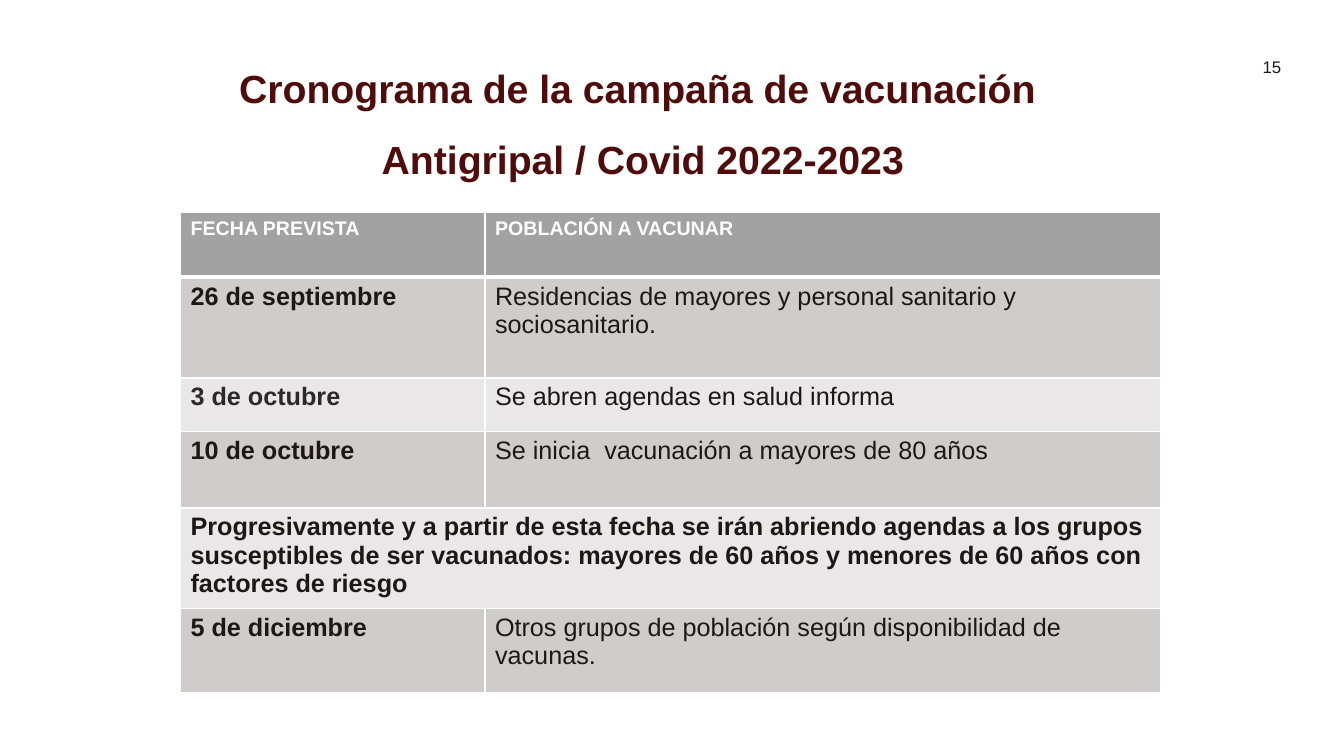
from lxml import etree
from pptx import Presentation
from pptx.dml.color import RGBColor
from pptx.enum.text import MSO_ANCHOR, PP_ALIGN
from pptx.oxml.ns import qn
from pptx.util import Inches, Pt

COLORS = {
    "title": "500C0A", "text": "1A1918", "soft_text": "2A2A2A",
    "white": "FFFFFF", "header": "A2A2A2", "dark_band": "D0CCCC", "light_band": "E9E7E7",
}
TITLE = ["Cronograma de la campaña de vacunación ", "Antigripal / Covid 2022-2023"]
PAGE_NUMBER = "15"
# One entry per row: height and cell texts; a single text spans both columns
SCHEDULE = [
    (0.64, ["FECHA PREVISTA", "POBLACIÓN A VACUNAR"]),
    (1.0, ["26 de septiembre", "Residencias de mayores y personal sanitario y sociosanitario."]),
    (0.53, ["3 de octubre", "Se abren agendas en salud informa"]),
    (0.76, ["10 de octubre", "Se inicia  vacunación a mayores de 80 años"]),
    (1.0, ["Progresivamente y a partir de esta fecha se irán abriendo agendas a los grupos "
           "susceptibles de ser vacunados: mayores de 60 años y menores de 60 años con "
           "factores de riesgo"]),
    (0.83, ["5 de diciembre", "Otros grupos de población según disponibilidad de vacunas."]),
]
COLUMN_WIDTHS = [3.02, 6.7]
SOFT_ROW = 2


def add_run(paragraph, text, size, color, bold=False):
    run = paragraph.add_run()
    run.text = text
    run.font.name = "Arial"
    run.font.size = Pt(size)
    run.font.bold = bold
    run.font.color.rgb = RGBColor.from_string(COLORS[color])


def set_borders(cell, bottom_width, top_width):
    """Draw white borders, placed ahead of the cell fill as the schema asks."""
    properties = cell._tc.get_or_add_tcPr()
    widths = {"a:lnL": 1, "a:lnR": 1, "a:lnT": top_width, "a:lnB": bottom_width}
    for position, (tag, width) in enumerate(widths.items()):
        line = etree.Element(qn(tag), w=str(Pt(width)))
        fill = etree.SubElement(line, qn("a:solidFill"))
        etree.SubElement(fill, qn("a:srgbClr"), val=COLORS["white"])
        properties.insert(position, line)


def add_page_number(slide):
    frame = slide.shapes.add_textbox(Inches(12.46), Inches(0.55), Inches(0.31), Inches(0.22)).text_frame
    frame.word_wrap = False
    frame.vertical_anchor = MSO_ANCHOR.MIDDLE
    frame.margin_left = frame.margin_right = Inches(0.02)
    frame.margin_top = frame.margin_bottom = 0
    frame.paragraphs[0].alignment = PP_ALIGN.CENTER
    add_run(frame.paragraphs[0], PAGE_NUMBER, 12, "text")


def add_title(slide):
    frame = slide.shapes.add_textbox(Inches(0.6), Inches(0.36), Inches(11.55), Inches(1.51)).text_frame
    frame.word_wrap = True
    for index, line in enumerate(TITLE):
        paragraph = frame.add_paragraph() if index else frame.paragraphs[0]
        paragraph.alignment = PP_ALIGN.CENTER
        paragraph.line_spacing = 1.5
        add_run(paragraph, line, 28, "title", bold=True)


def add_schedule(slide):
    total_height = sum(height for height, _ in SCHEDULE)
    schedule = slide.shapes.add_table(
        len(SCHEDULE), len(COLUMN_WIDTHS), Inches(1.79), Inches(2.11),
        Inches(sum(COLUMN_WIDTHS)), Inches(total_height)).table
    for column, width in zip(schedule.columns, COLUMN_WIDTHS):
        column.width = Inches(width)
    for row, (height, texts) in enumerate(SCHEDULE):
        schedule.rows[row].height = Inches(height)
        is_header = row == 0
        band = "header" if is_header else "dark_band" if row % 2 else "light_band"
        for column in range(len(COLUMN_WIDTHS)):
            cell = schedule.cell(row, column)
            cell.fill.solid()
            cell.fill.fore_color.rgb = RGBColor.from_string(COLORS[band])
            set_borders(cell, bottom_width=3 if is_header else 1, top_width=3 if row == 1 else 1)
        if len(texts) == 1:
            schedule.cell(row, 0).merge(schedule.cell(row, 1))
        for column, text in enumerate(texts):
            is_date = column == 0
            color = "white" if is_header else "soft_text" if row == SOFT_ROW and is_date else "text"
            add_run(schedule.cell(row, column).text_frame.paragraphs[0], text,
                    14 if is_header else 18, color, bold=is_header or is_date)


def main():
    deck = Presentation()
    deck.slide_width, deck.slide_height = Inches(13.33), Inches(7.5)
    slide = deck.slides.add_slide(deck.slide_layouts[6])
    add_page_number(slide)
    add_title(slide)
    add_schedule(slide)
    deck.save("out.pptx")


if __name__ == "__main__":
    main()
